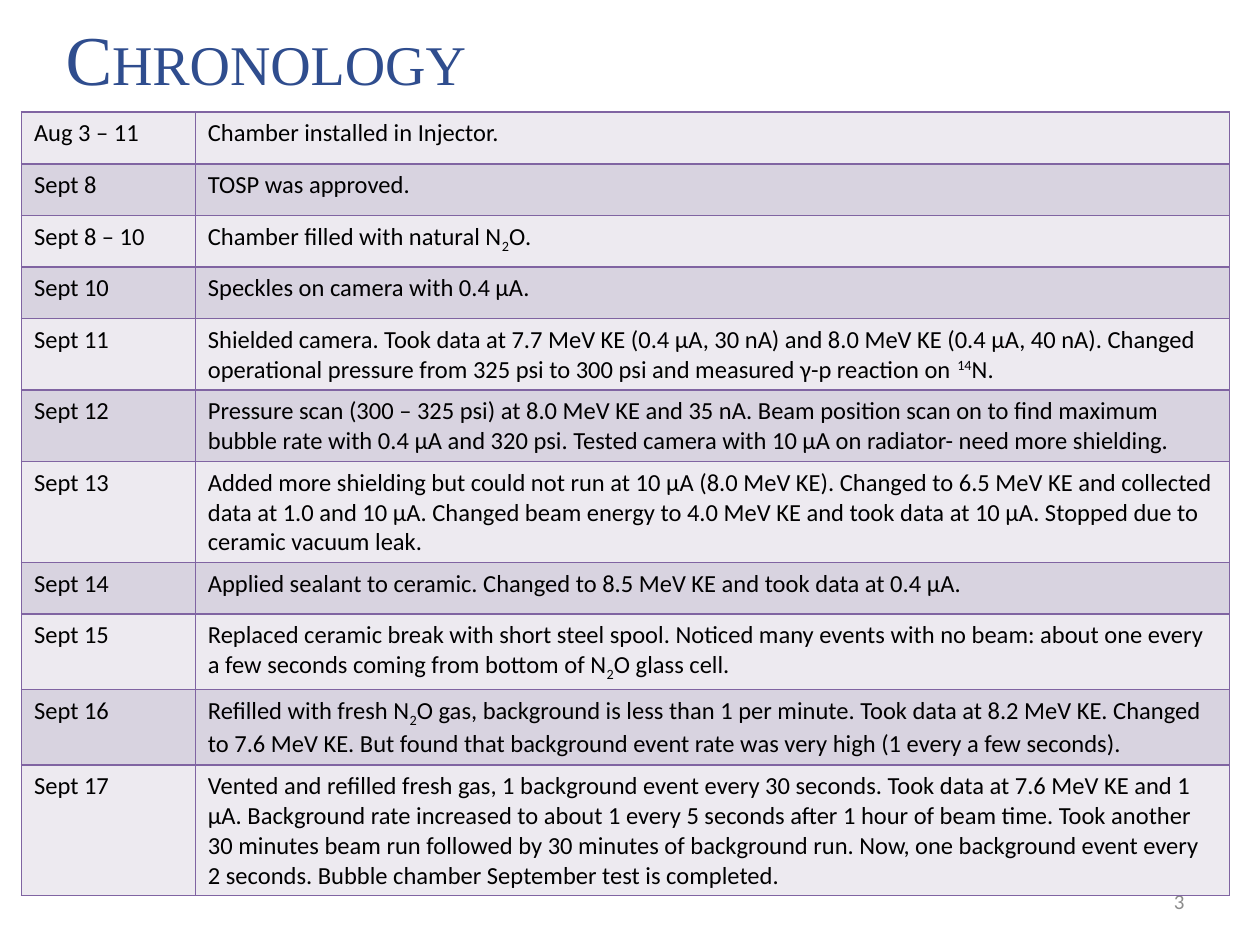
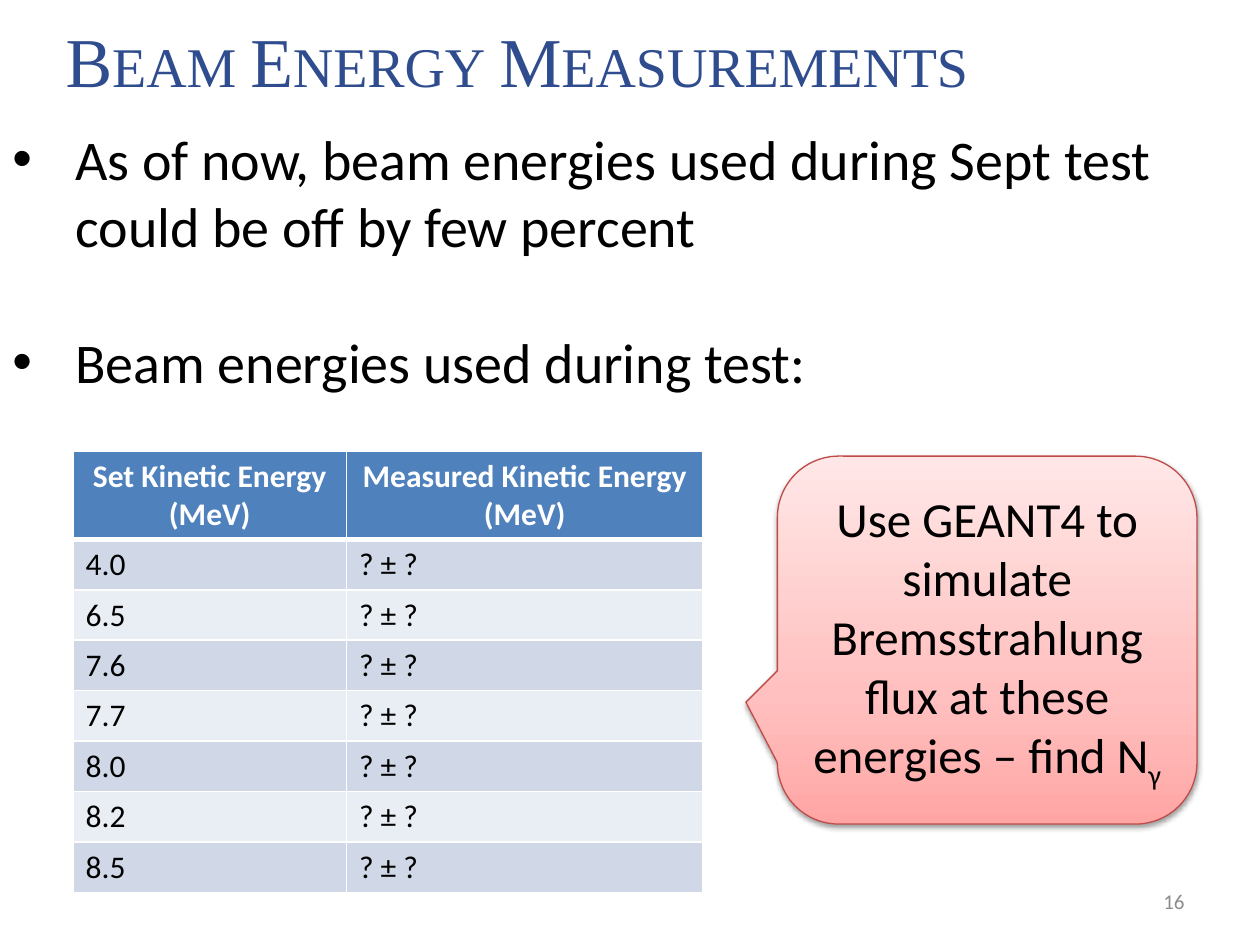
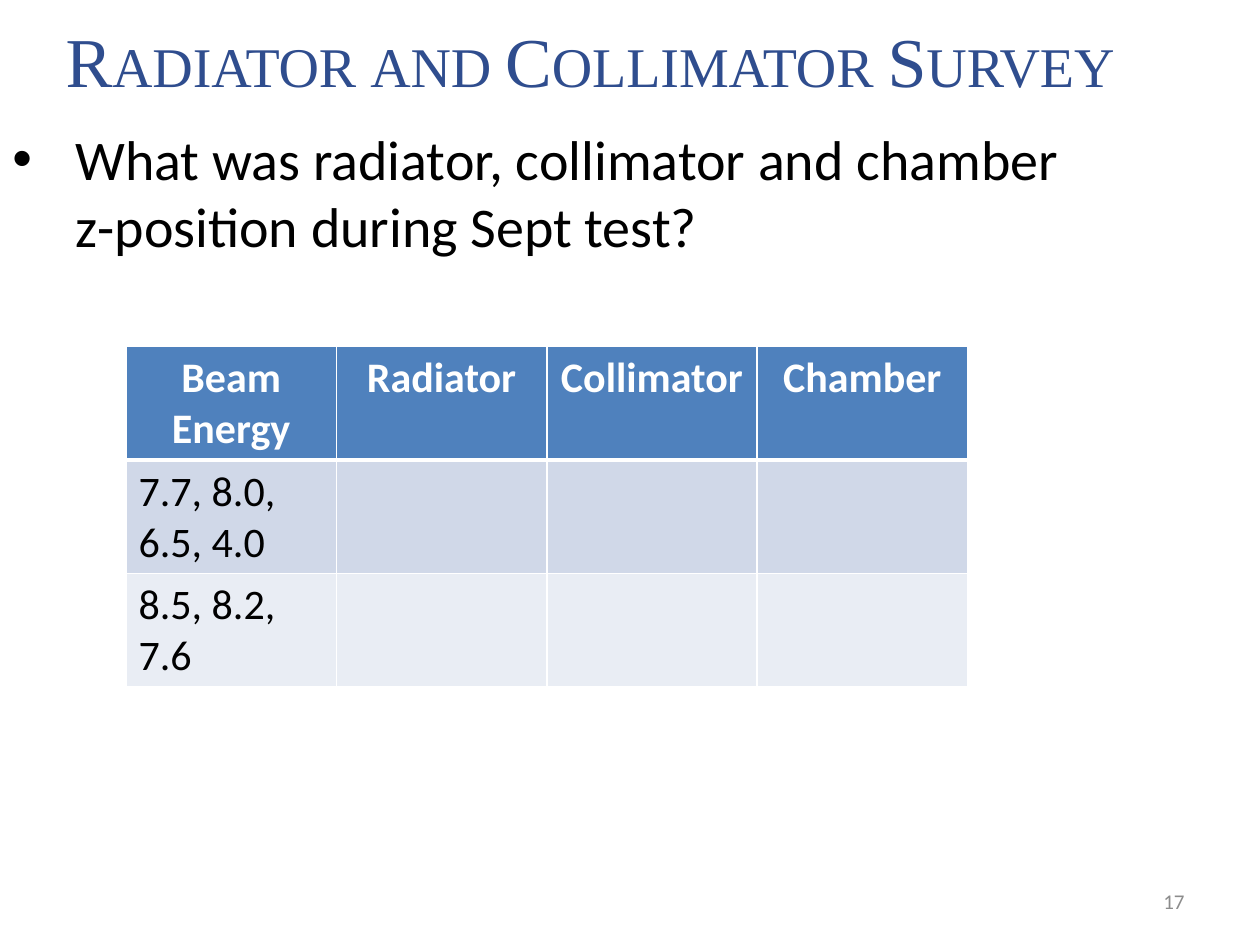
from copy import deepcopy
from dataclasses import dataclass

from lxml import etree
from pptx import Presentation
from pptx import util as u
from pptx.dml.color import RGBColor
from pptx.enum import shapes, text
from pptx.oxml import ns

PX = 9144
HUES = {
    "title": "2F4D8E", "ink": "000000", "page": "8C8C8C", "white": "FFFFFF",
    "head": "4F81BD", "blue": "D0D8E8", "pale": "E9EDF4",
    "plum": "8064A2", "lilac": "D8D3E0", "mist": "EDEAF0",
    "red": "BF4C48", "rose": "FFA6A5", "pink": "FFC0BF", "blush": "FFE7E7",
}
SANS, SERIF = "Calibri", "Times New Roman"
LEFT, MID, RIGHT = text.PP_ALIGN.LEFT, text.PP_ALIGN.CENTER, text.PP_ALIGN.RIGHT
SHIFTS = {"_": "-25000", "^": "30000"}


@dataclass(frozen=True)
class Box:
    x: int
    y: int
    w: int
    h: int

    def emu(self) -> list[u.Emu]:
        return [px(n) for n in (self.x, self.y, self.w, self.h)]


@dataclass(frozen=True)
class Grid:
    x: int
    y: int
    cols: list[int]
    rows: list[int]
    size: int
    edge: str
    bands: tuple[str, str]
    cells: list[list[str]]
    head: bool = True


def px(n: int) -> u.Emu:
    return u.Emu(n * PX)


def hue(name: str) -> RGBColor:
    return RGBColor.from_string(HUES[name])


def node(base, tag: str, **attrs: str):
    return etree.SubElement(base, ns.qn(tag), attrs)


def write(frame, words: str, *, size: int, font: str = SANS, color: str = "ink",
          bold: bool = False, align=LEFT, caps: bool = False,
          bullet: bool = False, gap: int = 0) -> None:
    frame.word_wrap = True
    for i, line in enumerate(words.split("\n")):
        para = frame.paragraphs[0] if i == 0 else frame.add_paragraph()
        para.alignment = align
        if i and gap:
            para.space_before = u.Pt(gap)
        if bullet:
            props = para._p.get_or_add_pPr()
            props.set("marL", str(px(50)))
            props.set("indent", str(px(-50)))
            node(props, "a:buFont", typeface="Arial")
            node(props, "a:buChar", char="•")
        for part in line.split("|"):
            run = para.add_run()
            run.text = part.lstrip("_^")
            run.font.size, run.font.name, run.font.bold = u.Pt(size), font, bold
            run.font.color.rgb = hue(color)
            props = run._r.get_or_add_rPr()
            if part[0] in SHIFTS:
                props.set("baseline", SHIFTS[part[0]])
            if caps:
                props.set("cap", "small")


def label(slide, box: Box, words: str, anchor=text.MSO_ANCHOR.TOP, **form) -> None:
    frame = slide.shapes.add_textbox(*box.emu()).text_frame
    frame.vertical_anchor = anchor
    write(frame, words, **form)


def start(deck, title: str, page: int, high: int = 94):
    slide = deck.slides.add_slide(deck.slide_layouts[5])
    head = slide.shapes.title
    head.left, head.top, head.width, head.height = Box(42, 0, 900, high).emu()
    frame = head.text_frame
    frame.auto_size = text.MSO_AUTO_SIZE.NONE
    frame.vertical_anchor = text.MSO_ANCHOR.MIDDLE
    write(frame, title, size=40, font=SERIF, color="title", caps=True)
    label(slide, Box(717, 695, 233, 40), str(page), text.MSO_ANCHOR.MIDDLE,
          size=12, color="page", align=RIGHT)
    return slide


def points(slide, wide: int, words: str) -> None:
    label(slide, Box(0, 94, wide, 118), words, size=32, bullet=True, gap=39)


def border(cell, color: str, base: int) -> None:
    props = cell._tc.get_or_add_tcPr()
    for i, side in enumerate("LRTB"):
        width = u.Pt(base if side == "B" else 1)
        line = etree.Element(ns.qn(f"a:ln{side}"), w=str(width))
        node(node(line, "a:solidFill"), "a:srgbClr", val=HUES[color])
        props.insert(i, line)


def draw(slide, grid: Grid) -> None:
    box = Box(grid.x, grid.y, sum(grid.cols), sum(grid.rows))
    table = slide.shapes.add_table(len(grid.rows), len(grid.cols), *box.emu()).table
    table.first_row, table.horz_banding = grid.head, False
    for col, wide in zip(table.columns, grid.cols):
        col.width = px(wide)
    for r, (row, high) in enumerate(zip(table.rows, grid.rows)):
        row.height = px(high)
        top = grid.head and r == 0
        for cell, words in zip(row.cells, grid.cells[r]):
            cell.fill.solid()
            cell.fill.fore_color.rgb = hue("head" if top else grid.bands[(r - grid.head) % 2])
            border(cell, grid.edge, 3 if top else 1)
            if words:
                write(cell.text_frame, words, size=grid.size, bold=top,
                      color="white" if top else "ink", align=MID if top else LEFT)


def callout(slide, box: Box, words: str) -> None:
    shape = slide.shapes.add_shape(
        shapes.MSO_SHAPE.ROUNDED_RECTANGULAR_CALLOUT, *box.emu())
    for i, ratio in enumerate((-0.575, 0.169, 0.167)):
        shape.adjustments[i] = ratio
    shape.fill.gradient()
    shape.fill.gradient_angle = 90
    stops = shape.element.spPr.find(".//" + ns.qn("a:gsLst"))
    stops.append(deepcopy(stops[0]))
    fades = ((0, "rose"), (0.35, "pink"), (1, "blush"))
    for stop, (place, color) in zip(shape.fill.gradient_stops, fades):
        stop.position = place
        stop.color.rgb = hue(color)
    shape.line.color.rgb, shape.line.width = hue("red"), u.Pt(0.75)
    shape.shadow.inherit = False
    glow = node(shape.element.spPr.find(ns.qn("a:effectLst")), "a:outerShdw",
                blurRad="40000", dist="20000", dir="5400000", rotWithShape="0")
    node(node(glow, "a:srgbClr", val=HUES["ink"]), "a:alpha", val="38000")
    shape.text_frame.vertical_anchor = text.MSO_ANCHOR.MIDDLE
    write(shape.text_frame, words, size=28, align=MID)


DAYS = [
    ["Aug 3 – 11", "Chamber installed in Injector."],
    ["Sept 8", "TOSP was approved."],
    ["Sept 8 – 10", "Chamber filled with natural N|_2|O."],
    ["Sept 10", "Speckles on camera with 0.4 μA."],
    ["Sept 11", "Shielded camera. Took data at 7.7 MeV KE (0.4 μA, 30 nA) and 8.0 MeV KE "
     "(0.4 μA, 40 nA). Changed operational pressure from 325 psi to 300 psi and "
     "measured γ-p reaction on |^14|N."],
    ["Sept 12", "Pressure scan (300 – 325 psi) at 8.0 MeV KE and 35 nA. Beam position scan "
     "on to find maximum bubble rate with 0.4 μA and 320 psi. Tested camera with "
     "10 μA on radiator- need more shielding."],
    ["Sept 13", "Added more shielding but could not run at 10 μA (8.0 MeV KE). Changed to "
     "6.5 MeV KE and collected data at 1.0 and 10 μA. Changed beam energy to 4.0 MeV KE "
     "and took data at 10 μA. Stopped due to ceramic vacuum leak."],
    ["Sept 14", "Applied sealant to ceramic. Changed to 8.5 MeV KE and took data at 0.4 μA."],
    ["Sept 15", "Replaced ceramic break with short steel spool. Noticed many events with no "
     "beam: about one every a few seconds coming from bottom of N|_2|O glass cell."],
    ["Sept 16", "Refilled with fresh N|_2|O gas, background is less than 1 per minute. Took "
     "data at 8.2 MeV KE. Changed to 7.6 MeV KE. But found that background event rate "
     "was very high (1 every a few seconds)."],
    ["Sept 17", "Vented and refilled fresh gas, 1 background event every 30 seconds. Took "
     "data at 7.6 MeV KE and 1 μA. Background rate increased to about 1 every 5 seconds "
     "after 1 hour of beam time. Took another 30 minutes beam run followed by 30 minutes "
     "of background run. Now, one background event every 2 seconds. Bubble chamber "
     "September test is completed."],
]
BEAMS = ["4.0", "6.5", "7.6", "7.7", "8.0", "8.2", "8.5"]
BLUES = ("blue", "pale")


def main() -> None:
    deck = Presentation()
    deck.slide_width, deck.slide_height = px(1000), px(750)

    slide = start(deck, "Chronology", 3, 92)
    draw(slide, Grid(17, 89, [138, 821], [41] * len(DAYS), 14, "plum",
                     ("mist", "lilac"), DAYS, head=False))

    slide = start(deck, "Beam Energy Measurements", 16)
    points(slide, 1000, "As of now, beam energies used during Sept test could be off by "
           "few percent\nBeam energies used during test:")
    cells = [["Set Kinetic Energy\n(MeV)", "Measured Kinetic Energy\n(MeV)"]]
    cells += [[beam, "? ± ?"] for beam in BEAMS]
    draw(slide, Grid(58, 358, [217, 283], [70] + [40] * len(BEAMS), 18, "white", BLUES, cells))
    callout(slide, Box(617, 362, 333, 292), "Use GEANT4 to simulate Bremsstrahlung flux "
            "at these energies – find N|_γ")

    slide = start(deck, "Radiator and Collimator Survey", 17)
    points(slide, 867, "What was radiator, collimator and chamber z-position during Sept test?")
    cells = [["Beam Energy", "Radiator", "Collimator", "Chamber"],
             ["7.7, 8.0, 6.5, 4.0", "", "", ""], ["8.5, 8.2, 7.6", "", "", ""]]
    draw(slide, Grid(100, 275, [167] * 4, [81] * 3, 24, "white", BLUES, cells))

    deck.save("out.pptx")


if __name__ == "__main__":
    main()
